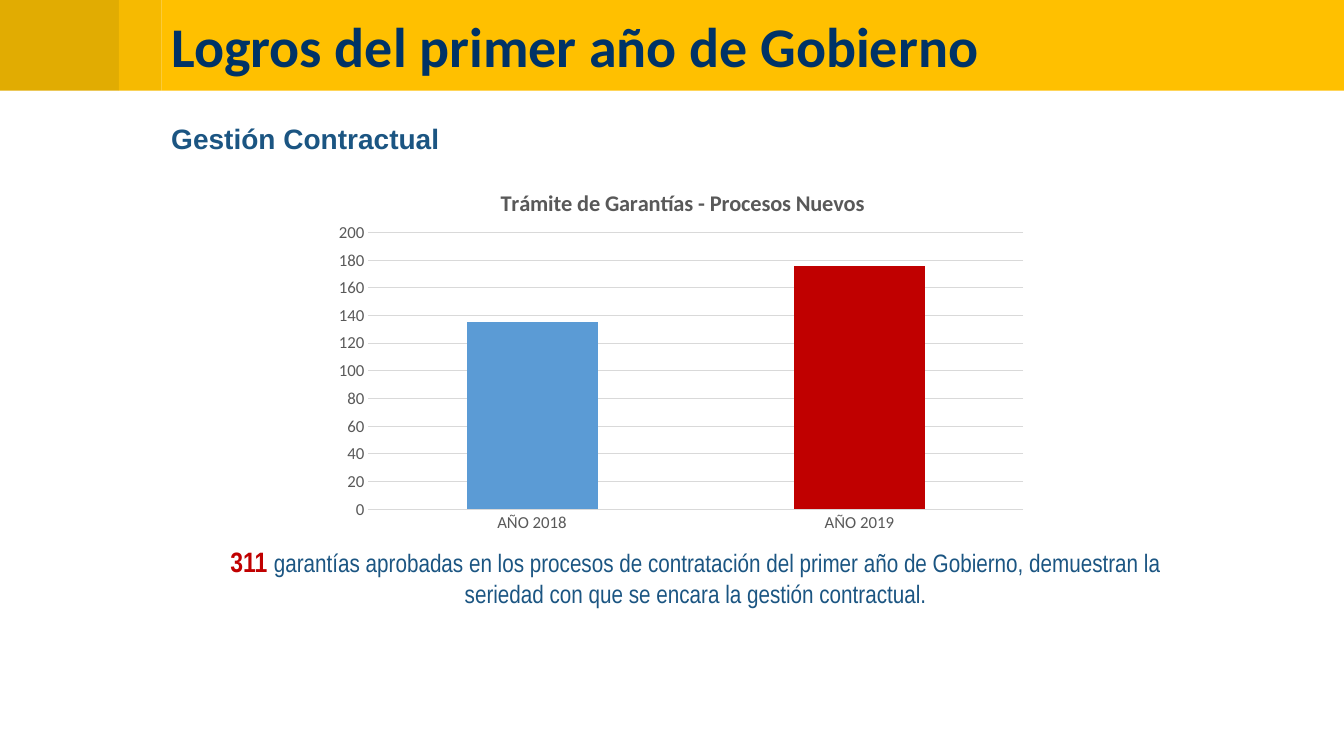
from lxml import etree
from pptx import Presentation
from pptx.chart.data import CategoryChartData
from pptx.dml.color import RGBColor
from pptx.enum.chart import XL_CHART_TYPE, XL_TICK_MARK
from pptx.enum.shapes import MSO_SHAPE
from pptx.enum.text import MSO_ANCHOR, PP_ALIGN
from pptx.oxml.ns import qn
from pptx.util import Inches, Pt

COLORS = {
    "gold": "FFC000",
    "dark_gold": "E1AC02",
    "mid_gold": "F6BA01",
    "navy": "003366",
    "blue": "1B5582",
    "red": "C00000",
    "bar_blue": "5B9BD5",
    "gray": "595959",
    "grid": "D9D9D9",
}


def color(name):
    return RGBColor.from_string(COLORS[name])


def set_font(font, name, size, color_name, bold=False):
    font.name = name
    font.size = Pt(size)
    font.bold = bold
    font.color.rgb = color(color_name)


def add_band(slide, left, width, fill):
    shape = slide.shapes.add_shape(
        MSO_SHAPE.RECTANGLE, Inches(left), Inches(-0.01), Inches(width), Inches(0.91)
    )
    shape.shadow.inherit = False
    shape.fill.solid()
    shape.fill.fore_color.rgb = color(fill)
    shape.line.fill.background()


def add_text(slide, box, runs, line_spacing=1.0, anchor=MSO_ANCHOR.TOP, align=PP_ALIGN.LEFT):
    """Add one paragraph; each run is (text, font name, size, colour, bold)."""
    frame = slide.shapes.add_textbox(*map(Inches, box)).text_frame
    frame.word_wrap = True
    frame.vertical_anchor = anchor
    paragraph = frame.paragraphs[0]
    paragraph.alignment = align
    paragraph.line_spacing = line_spacing
    for text, *style in runs:
        run = paragraph.add_run()
        run.text = text
        set_font(run.font, *style)


def add_layout(parent, index, **values):
    """Place a chart part by fractions of the chart's size."""
    for existing in parent.findall(qn("c:layout")):
        parent.remove(existing)
    layout = etree.Element(qn("c:layout"))
    parent.insert(index, layout)
    manual = etree.SubElement(layout, qn("c:manualLayout"))
    for tag, value in values.items():
        etree.SubElement(manual, qn(f"c:{tag}")).set("val", str(value))


def style_axis(axis):
    axis.major_tick_mark = XL_TICK_MARK.NONE
    axis.minor_tick_mark = XL_TICK_MARK.NONE
    axis.format.line.fill.background()
    set_font(axis.tick_labels.font, "Calibri", 12, "gray")


def add_guarantees_chart(slide):
    data = CategoryChartData()
    data.categories = ["AÑO 2018", "AÑO 2019"]
    data.add_series("Garantías", (135, 176))
    chart = slide.shapes.add_chart(
        XL_CHART_TYPE.COLUMN_CLUSTERED,
        Inches(3.23), Inches(1.64), Inches(7.06), Inches(3.71), data,
    ).chart
    chart.has_legend = False
    set_font(chart.font, "Calibri", 10, "gray")

    chart.has_title = True
    title = chart.chart_title
    paragraph = title.text_frame.paragraphs[0]
    paragraph.text = "Trámite de Garantías - Procesos Nuevos"
    set_font(paragraph.font, "Calibri", 16, "gray", True)
    title.include_in_layout = False
    add_layout(title._element, 1, xMode="edge", yMode="edge", x=0.24, y=0.05)

    style_axis(chart.category_axis)
    value_axis = chart.value_axis
    style_axis(value_axis)
    value_axis.minimum_scale, value_axis.maximum_scale = 0, 200
    value_axis.major_unit = 20
    grid_line = value_axis.major_gridlines.format.line
    grid_line.color.rgb = color("grid")
    grid_line.width = Pt(0.75)

    plot = chart.plots[0]
    plot.gap_width = 150
    plot.vary_by_categories = False
    series = plot.series[0]
    for fill, name in ((series.format.fill, "bar_blue"), (series.points[1].format.fill, "red")):
        fill.solid()
        fill.fore_color.rgb = color(name)
    add_layout(
        chart._chartSpace.chart.plotArea, 0, layoutTarget="inner",
        xMode="edge", yMode="edge", x=0.06, y=0.18, w=0.92, h=0.74,
    )


def main():
    presentation = Presentation()
    presentation.slide_width = Inches(13.33)
    presentation.slide_height = Inches(7.5)
    slide = presentation.slides.add_slide(presentation.slide_layouts[6])

    add_band(slide, 1.6, 11.73, "gold")
    add_band(slide, 0, 1.18, "dark_gold")
    add_band(slide, 1.18, 0.42, "mid_gold")
    add_guarantees_chart(slide)
    add_text(
        slide, (1.81, 5.35, 10.18, 0.74),
        [
            ("311 ", "Arial Narrow", 20, "red", True),
            ("garantías aprobadas en los procesos de contratación del primer año de Gobierno, "
             "demuestran la seriedad con que se encara la gestión contractual.",
             "Arial Narrow", 18, "blue"),
        ],
        align=PP_ALIGN.CENTER,
    )
    add_text(
        slide, (1.6, 0.03, 11.09, 0.91),
        [("Logros del primer año de Gobierno", "Calibri", 40, "navy", True)],
        line_spacing=0.9, anchor=MSO_ANCHOR.MIDDLE,
    )
    add_text(
        slide, (1.6, 0.99, 7.95, 0.54),
        [("Gestión Contractual", "Arial", 20, "blue", True)],
        line_spacing=1.5,
    )
    presentation.save("out.pptx")


if __name__ == "__main__":
    main()
